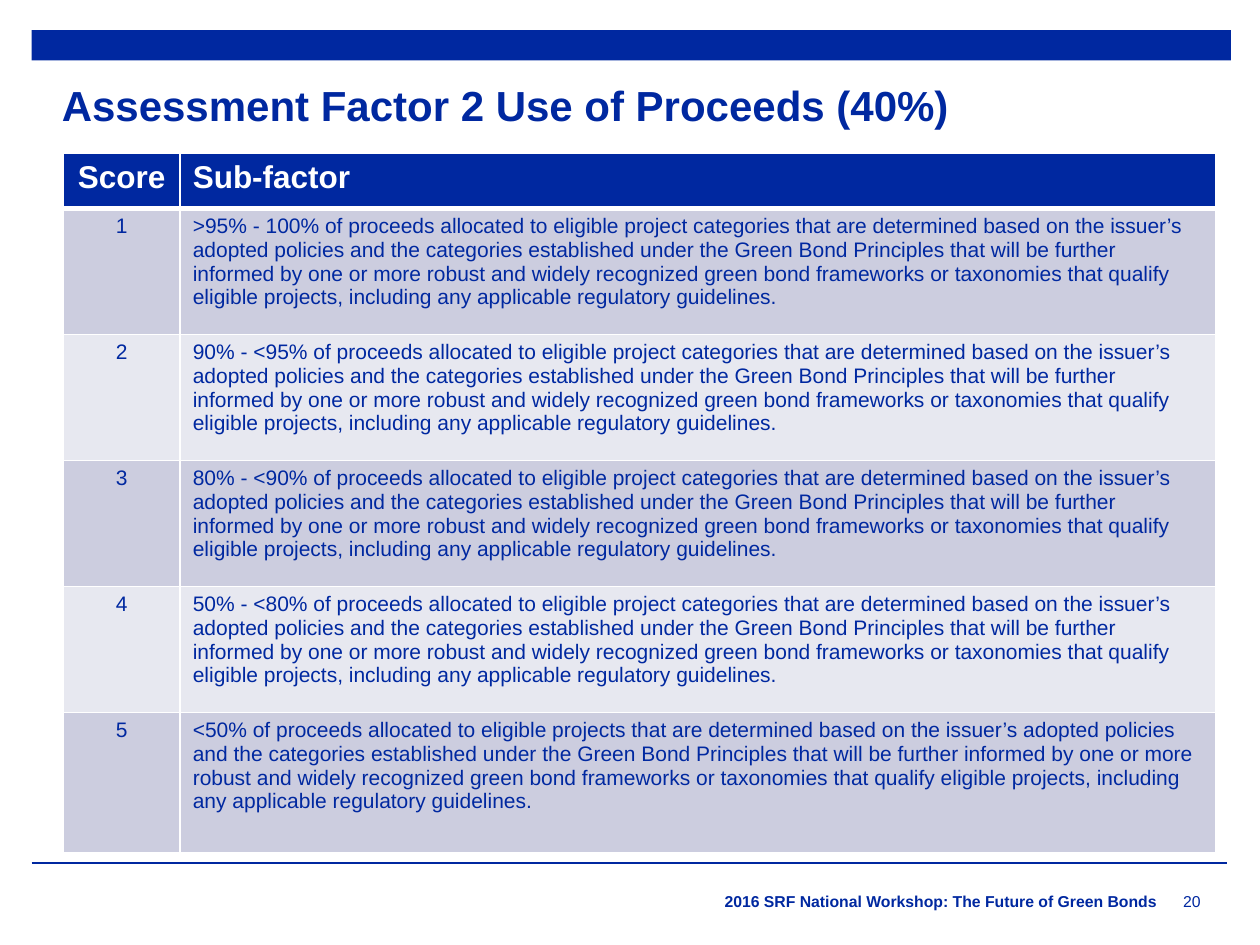
import dataclasses

import lxml.etree
import pptx
import pptx.dml.color
import pptx.enum.shapes
import pptx.enum.text
import pptx.oxml
import pptx.oxml.ns
import pptx.util

Pt = pptx.util.Pt
ALIGN = pptx.enum.text.PP_ALIGN
ANCHOR = pptx.enum.text.MSO_ANCHOR
COLORS = {"blue": "0028A0", "white": "FFFFFF", "odd": "CCCDDF", "even": "E7E8F0"}


@dataclasses.dataclass
class TextStyle:
    size: float
    color: str = "blue"
    bold: bool = False
    align: ALIGN = ALIGN.LEFT


@dataclasses.dataclass
class Score:
    share: str
    projects: str = "eligible project categories"

    def sentence(self) -> str:
        return (
            f"{self.share} of proceeds allocated to {self.projects} that are determined "
            "based on the issuer’s adopted policies and the categories established under "
            "the Green Bond Principles that will be further informed by one or more robust "
            "and widely recognized green bond frameworks or taxonomies that qualify "
            "eligible projects, including any applicable regulatory guidelines."
        )


SCORES = [
    Score(">95% - 100%"),
    Score("90% - <95%"),
    Score("80% - <90%"),
    Score("50% - <80%"),
    Score("<50%", "eligible projects"),
]
COLUMN_WIDTHS = [67, 591.8]
ROW_HEIGHTS = [31.7, 72, 72, 72, 72, 79.9]


def rgb(name: str) -> pptx.dml.color.RGBColor:
    return pptx.dml.color.RGBColor.from_string(COLORS[name])


def apply(target, values: dict) -> None:
    for attribute, value in values.items():
        setattr(target, attribute, value)


def write(frame, text: str, style: TextStyle, line_spacing: float = 1.0) -> None:
    paragraph = frame.paragraphs[0]
    apply(paragraph, {"alignment": style.align, "line_spacing": line_spacing, "space_before": Pt(0)})
    run = paragraph.add_run()
    run.text = text
    apply(run.font, {"name": "Arial", "size": Pt(style.size), "bold": style.bold})
    run.font.color.rgb = rgb(style.color)


def clear_insets(frame) -> None:
    apply(frame, {
        "margin_left": 0, "margin_top": 0, "margin_right": 0, "margin_bottom": 0,
        "word_wrap": True, "vertical_anchor": ANCHOR.TOP,
    })


def add_label(slide, left: float, width: float, text: str, style: TextStyle) -> None:
    frame = slide.shapes.add_textbox(Pt(left), Pt(509.8), Pt(width), Pt(12.2)).text_frame
    clear_insets(frame)
    write(frame, text, style)


def add_frame_marks(slide) -> None:
    rule = slide.shapes.add_connector(
        pptx.enum.shapes.MSO_CONNECTOR.STRAIGHT, Pt(18), Pt(493.2), Pt(701.3), Pt(493.2))
    rule.line.color.rgb = rgb("blue")
    rule.line.width = Pt(1)
    lxml.etree.SubElement(rule._element.spPr, pptx.oxml.ns.qn("a:effectLst"))
    band = slide.shapes.add_shape(
        pptx.enum.shapes.MSO_SHAPE.RECTANGLE, Pt(18), Pt(17.3), Pt(685.4), Pt(17.3))
    band.shadow.inherit = False
    band.fill.solid()
    band.fill.fore_color.rgb = rgb("blue")
    band.line.fill.background()


def add_title(slide, text: str) -> None:
    title = slide.shapes.title
    apply(title, {"left": Pt(35.3), "top": Pt(49.7), "width": Pt(648), "height": Pt(24.5)})
    clear_insets(title.text_frame)
    title.text_frame.auto_size = pptx.enum.text.MSO_AUTO_SIZE.SHAPE_TO_FIT_TEXT
    write(title.text_frame, text, TextStyle(24, bold=True), 0.85)


def set_borders(cell, widths: dict[str, float]) -> None:
    properties = cell._tc.get_or_add_tcPr()
    for position, (side, width) in enumerate(widths.items()):
        properties.insert(position, pptx.oxml.parse_xml(
            f'<a:{side} {pptx.oxml.ns.nsdecls("a")} w="{Pt(width)}"><a:solidFill>'
            f'<a:srgbClr val="{COLORS["white"]}"/></a:solidFill></a:{side}>'))


def fill_cell(cell, text: str, fill: str, style: TextStyle, top: float, bottom: float) -> None:
    cell.fill.solid()
    cell.fill.fore_color.rgb = rgb(fill)
    set_borders(cell, {"lnL": 1, "lnR": 1, "lnT": top, "lnB": bottom})
    write(cell.text_frame, text, style)


def add_score_table(slide) -> None:
    table = slide.shapes.add_table(
        len(ROW_HEIGHTS), len(COLUMN_WIDTHS), Pt(36), Pt(87.5),
        Pt(sum(COLUMN_WIDTHS)), Pt(sum(ROW_HEIGHTS))).table
    table.horz_banding = False
    for column, width in zip(table.columns, COLUMN_WIDTHS):
        column.width = Pt(width)
    for row, height in zip(table.rows, ROW_HEIGHTS):
        row.height = Pt(height)
    contents = [("Score", "Sub-factor")]
    contents += [(str(number), score.sentence()) for number, score in enumerate(SCORES, 1)]
    for row_index, texts in enumerate(contents):
        header = row_index == 0
        fill = "blue" if header else "odd" if row_index % 2 else "even"
        for column_index, text in enumerate(texts):
            align = ALIGN.LEFT if column_index else ALIGN.CENTER
            style = TextStyle(18, "white", True, align) if header else TextStyle(12, align=align)
            fill_cell(table.cell(row_index, column_index), text, fill, style,
                      3 if row_index == 1 else 1, 3 if header else 1)


def main() -> None:
    presentation = pptx.Presentation()
    apply(presentation, {"slide_width": Pt(720), "slide_height": Pt(540)})
    slide = presentation.slides.add_slide(presentation.slide_layouts[5])
    add_frame_marks(slide)
    add_label(slide, 344.9, 316, "2016 SRF National Workshop: The Future of Green Bonds",
              TextStyle(9, bold=True, align=ALIGN.RIGHT))
    add_title(slide, "Assessment Factor 2 Use of Proceeds (40%)")
    add_score_table(slide)
    add_label(slide, 676.1, 33.8, "20", TextStyle(9))
    presentation.save("out.pptx")


if __name__ == "__main__":
    main()
